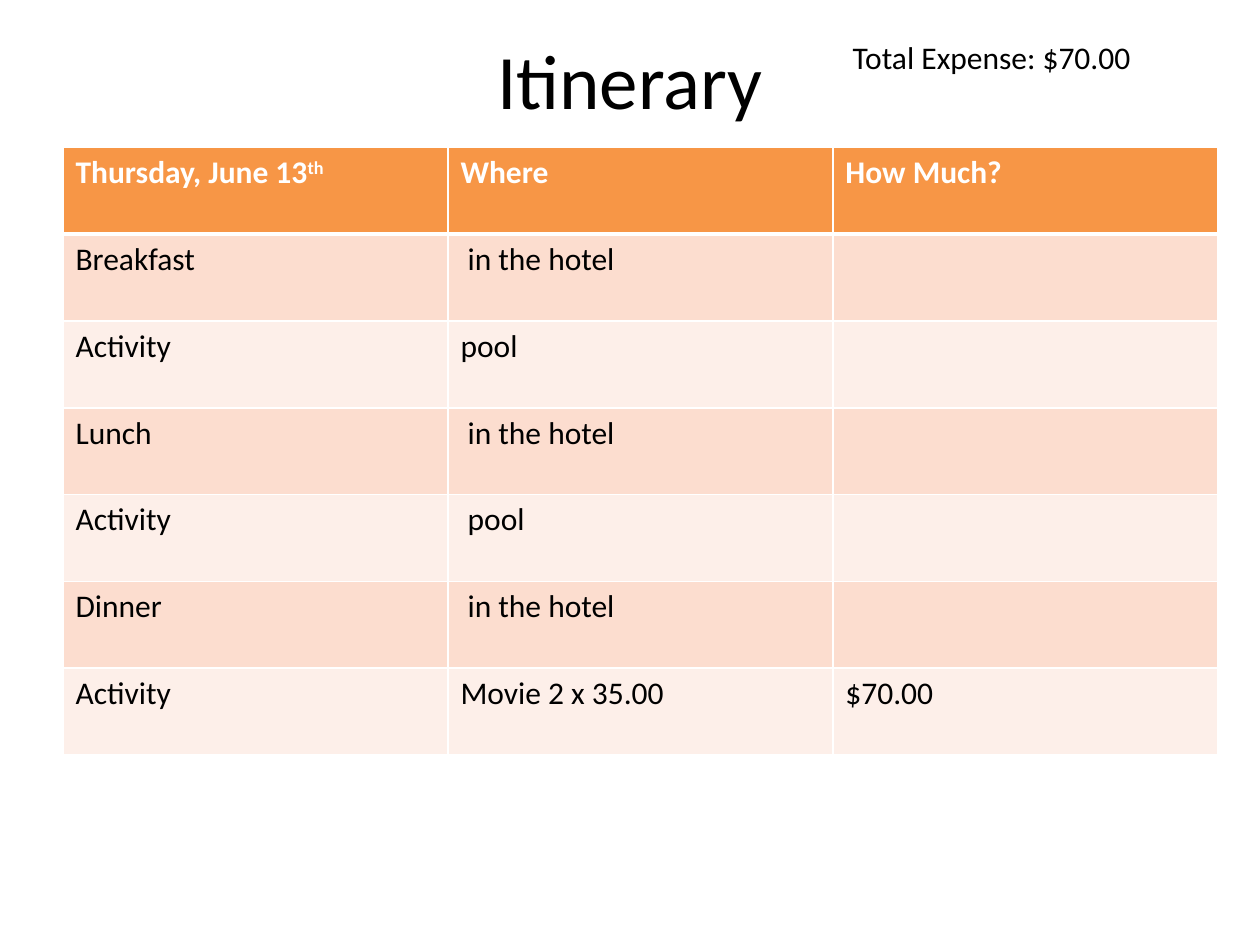
from pptx import Presentation
from pptx.dml.color import RGBColor
from pptx.enum.text import MSO_ANCHOR, PP_ALIGN
from pptx.oxml import parse_xml
from pptx.oxml.ns import nsdecls
from pptx.util import Cm, Pt

FONT = "Calibri"
BLACK, WHITE, ORANGE = "000000", "FFFFFF", "F79646"
BANDS = ["FCDDCF", "FDEFE9"]

TITLE = "Itinerary"
TOTAL = "Total Expense: $70.00"
HEAD = [["Thursday, June 13", "th"], ["Where"], ["How Much?"]]
PLANS = [
    ("Breakfast", " in the hotel", ""),
    ("Activity", "pool", ""),
    ("Lunch", " in the hotel", ""),
    ("Activity", " pool", ""),
    ("Dinner", " in the hotel", ""),
    ("Activity", "Movie 2 x 35.00", "$70.00"),
]
LEFT, TOP, COL, ROW = 1.27, 2.97, 7.76, 1.75


def rgb(code):
    return RGBColor.from_string(code)


def add_run(para, text, size=18, color=BLACK, bold=False):
    run = para.add_run()
    run.text = text
    font = run.font
    font.name, font.size, font.bold = FONT, Pt(size), bold
    font.color.rgb = rgb(color)
    return run


def add_text(slide, box, text, size):
    frame = slide.shapes.add_textbox(*map(Cm, box)).text_frame
    frame.word_wrap = True
    add_run(frame.paragraphs[0], text, size)
    return frame


def set_edges(cell, **widths):
    """Draw white borders, 1 pt wide unless a side is named."""
    props = cell._tc.get_or_add_tcPr()
    for side in "LRTB":
        width = Pt(widths.get(side, 1))
        props.append(parse_xml(
            f'<a:ln{side} {nsdecls("a")} w="{width}"><a:solidFill>'
            f'<a:srgbClr val="{WHITE}"/></a:solidFill></a:ln{side}>'))


def paint(cell, color):
    cell.fill.solid()
    cell.fill.fore_color.rgb = rgb(color)


def add_plan(slide):
    rows, cols = len(PLANS) + 1, len(HEAD)
    table = slide.shapes.add_table(
        rows, cols, Cm(LEFT), Cm(TOP), Cm(COL * cols), Cm(ROW * rows)).table
    table.first_row = table.horz_banding = False
    for col in table.columns:
        col.width = Cm(COL)
    for row in table.rows:
        row.height = Cm(ROW)

    for c, parts in enumerate(HEAD):
        cell = table.cell(0, c)
        set_edges(cell, B=3)
        paint(cell, ORANGE)
        para = cell.text_frame.paragraphs[0]
        for i, part in enumerate(parts):
            run = add_run(para, part, color=WHITE, bold=True)
            if i:
                run.font._element.set("baseline", "30000")

    for r, plan in enumerate(PLANS):
        for c, text in enumerate(plan):
            cell = table.cell(r + 1, c)
            set_edges(cell, T=1 if r else 3)
            paint(cell, BANDS[r % 2])
            if text:
                add_run(cell.text_frame.paragraphs[0], text)


def main():
    deck = Presentation()
    deck.slide_width, deck.slide_height = Cm(25.4), Cm(19.05)
    slide = deck.slides.add_slide(deck.slide_layouts[6])
    title = add_text(slide, (1.27, 0, 22.86, 3.18), TITLE, 44)
    title.vertical_anchor = MSO_ANCHOR.MIDDLE
    title.paragraphs[0].alignment = PP_ALIGN.CENTER
    add_text(slide, (16.94, 0.64, 7.82, 1.03), TOTAL, 18)
    add_plan(slide)
    deck.save("out.pptx")


if __name__ == "__main__":
    main()
